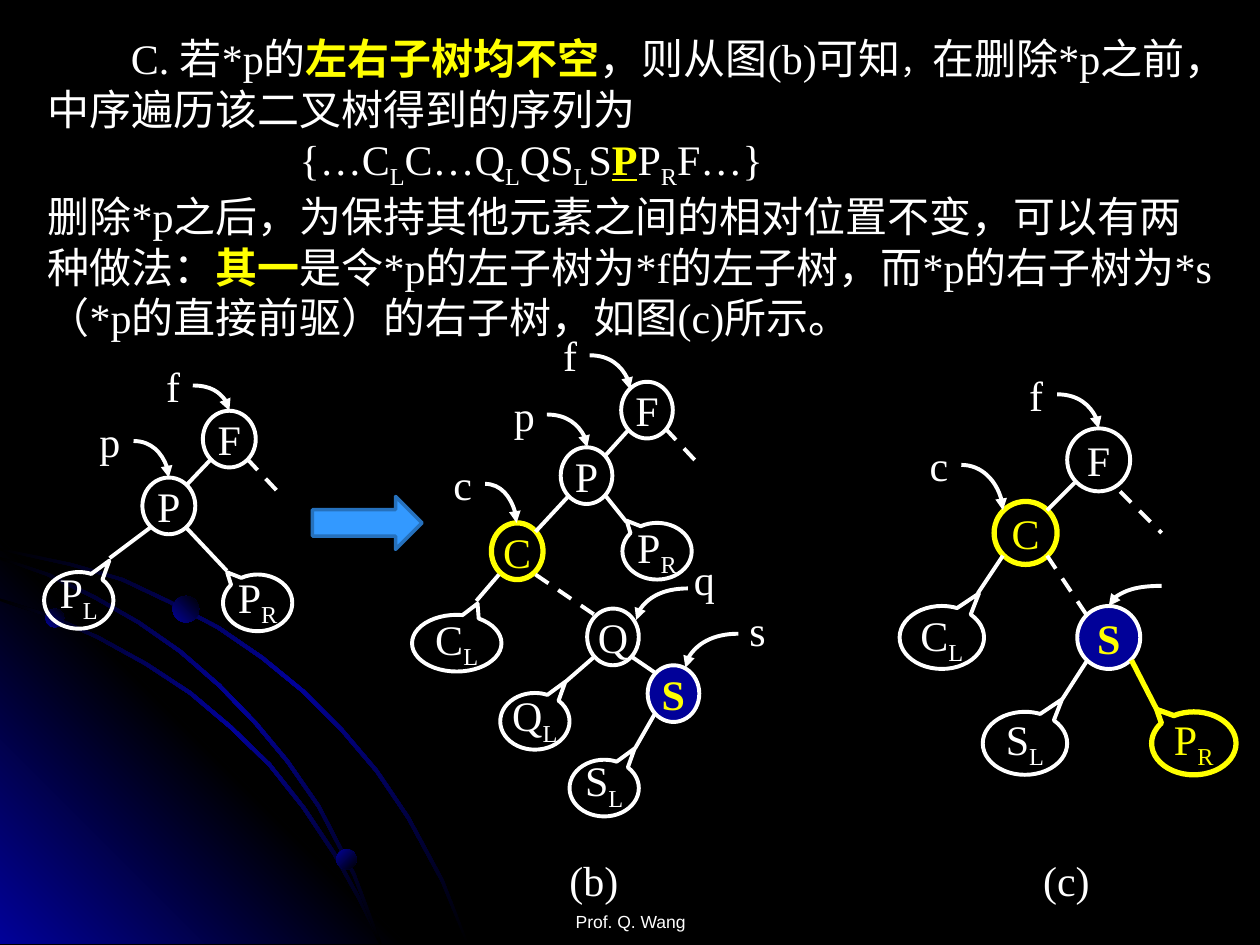
from pptx import Presentation
from pptx.dml.color import RGBColor
from pptx.enum.dml import MSO_LINE
from pptx.enum.shapes import MSO_CONNECTOR, MSO_SHAPE
from pptx.enum.text import MSO_ANCHOR, MSO_AUTO_SIZE, PP_ALIGN
from pptx.oxml.ns import qn
from pptx.util import Inches, Pt
from lxml import etree

OVAL, CALL, ARROW = MSO_SHAPE.OVAL, MSO_SHAPE.OVAL_CALLOUT, MSO_SHAPE.RIGHT_ARROW
LINE, CURVE, DASH = MSO_CONNECTOR.STRAIGHT, MSO_CONNECTOR.CURVE, MSO_LINE.DASH
MID, LOW, TOP = MSO_ANCHOR.MIDDLE, MSO_ANCHOR.BOTTOM, MSO_ANCHOR.TOP
LEFT, CENTER = PP_ALIGN.LEFT, PP_ALIGN.CENTER
GROW, FIXED = MSO_AUTO_SIZE.SHAPE_TO_FIT_TEXT, MSO_AUTO_SIZE.NONE

COLORS = {"black": "000000", "white": "FFFFFF", "yellow": "FFFF00",
          "navy": "010199", "blue": "3399FF", "edge": "2671BD"}
SERIF, SANS = "Times New Roman", "Arial"

# Looks of tree parts: fill, line colour, line width, text colour, bold
LOOKS = {"plain": (None, "white", 2.25, "white", False),
         "key": (None, "yellow", 3, "yellow", False),
         "pred": ("navy", "white", 2.25, "yellow", True)}

# Upper edges of the orbit bands
ORBITS = [
    [(0, 4.35), (0.57, 4.47), (0.98, 4.59), (1.36, 4.77), (1.74, 4.97), (2.09, 5.21),
     (2.42, 5.48), (2.72, 5.78), (3, 6.11), (3.25, 6.48), (3.52, 6.98), (3.72, 7.49)],
    [(0, 4.75), (0.41, 4.88), (0.79, 5.05), (1.17, 5.26), (1.52, 5.49), (1.84, 5.76),
     (2.15, 6.06), (2.42, 6.4), (2.66, 6.76), (2.86, 7.12), (3.03, 7.49)],
    [(0, 4.42), (0.39, 4.55), (0.76, 4.73), (1.11, 4.93), (1.44, 5.16), (1.75, 5.43),
     (2.04, 5.73), (2.29, 6.03), (2.54, 6.39), (2.82, 6.93), (3.03, 7.49)]]

# Trees: nodes (text, x, y, look), subtrees (text, x, y, width, side, spacing, look),
# edges and pointers (x1, y1, x2, y2), labels (text, x, y, width)
TREES = [
    {"size": (0.42, 0.45),
     "nodes": [("F", 1.61, 3.26, "plain"), ("P", 1.13, 3.79, "plain")],
     "subs": [("PL", 0.35, 4.54, 0.55, 1, 0.5, "plain"),
              ("PR", 1.77, 4.56, 0.55, -1, 0.6, "plain")],
     "edges": [(1.67, 3.65, 1.48, 3.85), (1.19, 4.19, 0.87, 4.43), (1.48, 4.19, 1.8, 4.53)],
     "dashes": [(1.96, 3.64, 2.24, 3.94)],
     "marks": [(1.53, 3.06, 1.82, 3.26), (1.06, 3.5, 1.34, 3.79)],
     "labels": [("f", 1.22, 2.81, 0.31), ("p", 0.69, 3.25, 0.37)]},
    {"size": (0.41, 0.45),
     "nodes": [("F", 4.93, 3.03, "plain"), ("P", 4.45, 3.55, "plain"), ("C", 3.9, 4.15, "key"),
               ("Q", 4.66, 4.83, "plain"), ("S", 5.14, 5.28, "pred")],
     "subs": [("CL", 3.27, 4.88, 0.71, 0.53, 0.7, "plain"),
              ("PR", 4.94, 4.15, 0.55, -1, 0.7, "plain"),
              ("QL", 3.97, 5.5, 0.55, 1, 0.6, "plain"),
              ("SL", 4.52, 6.03, 0.55, 1, 0.5, "plain")],
     "edges": [(4.99, 3.41, 4.8, 3.62), (4.51, 3.94, 4.25, 4.22), (3.96, 4.56, 3.78, 4.77),
               (4.81, 3.94, 4.97, 4.14), (4.72, 5.21, 4.49, 5.41), (5.2, 5.66, 5.04, 5.94),
               (5.01, 5.21, 5.2, 5.34)],
     "dashes": [(4.25, 4.56, 4.72, 4.88), (5.28, 3.4, 5.56, 3.7)],
     "marks": [(4.68, 2.82, 5, 3.09), (4.34, 3.29, 4.66, 3.55), (5.46, 4.67, 5.05, 4.92),
               (5.86, 5.03, 5.44, 5.3), (3.85, 3.84, 4.1, 4.15)],
     "labels": [("f", 4.37, 2.57, 0.31), ("p", 3.98, 3.04, 0.37), ("c", 3.5, 3.59, 0.35),
                ("s", 5.85, 4.75, 0.33), ("q", 5.41, 4.34, 0.37), ("(b)", 4.42, 6.73, 0.59)]},
    {"size": (0.5, 0.5),
     "nodes": [("F", 8.47, 3.4, "plain"), ("C", 7.89, 3.98, "key"), ("S", 8.55, 4.81, "pred")],
     "subs": [("SL", 7.8, 5.65, 0.67, 1, 0.7, "plain"), ("PR", 9.14, 5.65, 0.67, -1, 0.7, "key"),
              ("CL", 7.14, 4.81, 0.67, 1, 0.8, "plain")],
     "edges": [(8.54, 3.82, 8.31, 4.05), (8.63, 5.24, 8.43, 5.55), (7.96, 4.41, 7.76, 4.71)],
     "keys": [(8.98, 5.24, 9.18, 5.63)],
     "dashes": [(8.89, 3.9, 9.22, 4.23), (8.31, 4.41, 8.63, 4.89)],
     "marks": [(8.39, 3.13, 8.72, 3.4), (7.63, 3.69, 7.96, 4.05), (9.22, 4.65, 8.8, 4.81)],
     "labels": [("f", 8.07, 2.88, 0.31), ("c", 7.28, 3.44, 0.35), ("(c)", 8.18, 6.73, 0.58)]}]

# Body text: paragraphs of (text, style) runs with left margin and first-line indent
BODY = [
    ([("C. 若*p的", ""), ("左右子树均不空", "key"), ("，则从图(b)可知", ""), ("，", "small"),
      ("在删除*p之前，中序遍历该二叉树得到的序列为", "")], 0, 0.66),
    ([("{…C", ""), ("L", "sub"), ("C…Q", ""), ("L", "sub"), ("QS", ""), ("L", "sub"), ("S", ""),
      ("P", "under"), ("P", ""), ("R", "sub"), ("F…}", "")], 2, 0),
    ([("删除*p之后，为保持其他元素之间的相对位置不变，可以有两种做法：", ""), ("其一", "key"),
      ("是令*p的左子树为*f的左子树，而*p的右子树为*s（*p的直接前驱）的右子树，如图(c)所示。", "")],
     0, 0)]


def rgb(name):
    return RGBColor.from_string(COLORS[name])


def write(shape, paras, size=24, font=SERIF, color="white", bold=False, align=LEFT,
          anchor=TOP, wrap=False, fit=FIXED, space=None):
    frame = shape.text_frame
    frame.word_wrap, frame.auto_size, frame.vertical_anchor = wrap, fit, anchor
    for i, (runs, margin, indent) in enumerate(paras):
        para = frame.add_paragraph() if i else frame.paragraphs[0]
        para.alignment = align
        if space:
            para.line_spacing = space
        if margin or indent:
            props = para._p.get_or_add_pPr()
            props.set("marL", str(Inches(margin)))
            props.set("indent", str(Inches(indent)))
        for text, style in runs:
            run = para.add_run()
            run.text = text
            face, strong = run.font, style in ("key", "under")
            face.name = SANS if style == "small" else font
            face.size = Pt(18 if style == "small" else size)
            face.bold = bold or strong
            face.color.rgb = rgb("yellow" if strong else color)
            if style == "under":
                face.underline = True
            if style == "sub":
                run._r.get_or_add_rPr().set("baseline", "-25000")


def label(shapes, paras, x, y, w, h, **style):
    box = shapes.add_textbox(Inches(x), Inches(y), Inches(w), Inches(h))
    write(box, paras, **style)
    return box


def solid(shapes, kind, x, y, w, h, fill, line, width):
    shape = shapes.add_shape(kind, Inches(x), Inches(y), Inches(w), Inches(h))
    shape.shadow.inherit = False
    if fill:
        shape.fill.solid()
        shape.fill.fore_color.rgb = rgb(fill)
    else:
        shape.fill.background()
    shape.line.color.rgb = rgb(line)
    shape.line.width = Pt(width)
    return shape


def part(shapes, kind, runs, x, y, w, h, look, space=None):
    fill, line, width, color, bold = LOOKS[look]
    shape = solid(shapes, kind, x, y, w, h, fill, line, width)
    write(shape, [(runs, 0, 0)], color=color, bold=bold, align=CENTER, anchor=MID, space=space)
    return shape


def link(shapes, ends, kind=LINE, color="white", width=2.25, dash=False):
    item = shapes.add_connector(kind, *[Inches(v) for v in ends])
    item.line.color.rgb = rgb(color)
    item.line.width = Pt(width)
    if dash:
        item.line.dash_style = DASH
    props = item._element.spPr
    if kind == CURVE:
        props.find(qn("a:prstGeom")).set("prst", "curvedConnector2")
        etree.SubElement(props.find(qn("a:ln")), qn("a:tailEnd"), type="triangle")
    etree.SubElement(props, qn("a:effectLst"))


def shade(shape, names, angle):
    """Spread the named colours evenly along a linear gradient."""
    shape.shadow.inherit = False
    shape.line.fill.background()
    shape.fill.gradient()
    shape.fill.gradient_angle = angle
    stops = shape._element.spPr.find(qn("a:gradFill")).find(qn("a:gsLst"))
    for stop in list(stops):
        stops.remove(stop)
    for i, name in enumerate(names):
        stop = etree.SubElement(stops, qn("a:gs"), pos=str(100000 * i // (len(names) - 1)))
        etree.SubElement(stop, qn("a:srgbClr"), val=COLORS[name])


def outline(shapes, points):
    spots = [(Inches(x), Inches(y)) for x, y in points]
    pen = shapes.build_freeform(*spots[0])
    pen.add_line_segments(spots[1:], close=True)
    return pen.convert_to_shape()


def backdrop(shapes):
    glow = outline(shapes, [(0, 4.27), (3.22, 7.49), (0, 7.49)])
    shade(glow, ["navy", "black", "navy"], 45)
    for edge in ORBITS:
        lower = [(max(0, x - 0.02), min(7.49, y + 0.02)) for x, y in reversed(edge)]
        shade(outline(shapes, edge + lower), ["black", "navy", "black"], 315)
    for x, y, d, angle in [(0.36, 4.83, 0.15, 45), (2.67, 6.74, 0.16, 315), (1.37, 4.73, 0.21, 45)]:
        ball = shapes.add_shape(OVAL, Inches(x), Inches(y), Inches(d), Inches(d))
        shade(ball, ["navy", "black"], angle)


def draw(shapes, tree):
    wide, high = tree["size"]
    for text, x, y, look in tree["nodes"]:
        part(shapes, OVAL, [(text, "")], x, y, wide, high, look)
    for text, x, y, w, side, space, look in tree["subs"]:
        runs = [(text[0], ""), (text[1], "sub")]
        shape = part(shapes, CALL, runs, x, y, w, high, look, space)
        shape.adjustments[0] = 0.44 * side
        shape.adjustments[1] = -0.7 if side > 0 else -0.54
    for ends in tree["edges"]:
        link(shapes, ends)
    for ends in tree.get("keys", []):
        link(shapes, ends, color="yellow", width=3)
    for ends in tree["dashes"]:
        link(shapes, ends, dash=True)
    for ends in tree["marks"]:
        link(shapes, ends, kind=CURVE)
    for text, x, y, w in tree["labels"]:
        label(shapes, [([(text, "")], 0, 0)], x, y, w, 0.5, fit=GROW)


def main():
    deck = Presentation()
    deck.slide_width, deck.slide_height = Inches(10), Inches(7.5)
    slide = deck.slides.add_slide(deck.slide_layouts[6])
    slide.background.fill.solid()
    slide.background.fill.fore_color.rgb = rgb("black")
    shapes = slide.shapes

    backdrop(shapes.add_group_shape().shapes)
    label(shapes, BODY, 0.28, 0.21, 9.45, 2.52, wrap=True, fit=GROW)
    for tree in TREES:
        draw(shapes.add_group_shape().shapes, tree)

    # Footer and step arrow
    foot = label(shapes, [([("Prof. Q. Wang", "")], 0, 0)], 3.42, 6.9, 3.17, 0.5,
                 size=10, font=SANS, align=CENTER, anchor=LOW, wrap=True)
    foot.text_frame.margin_bottom = 0
    solid(shapes, ARROW, 2.48, 3.94, 0.87, 0.42, "blue", "edge", 2)
    deck.save("out.pptx")


if __name__ == "__main__":
    main()
